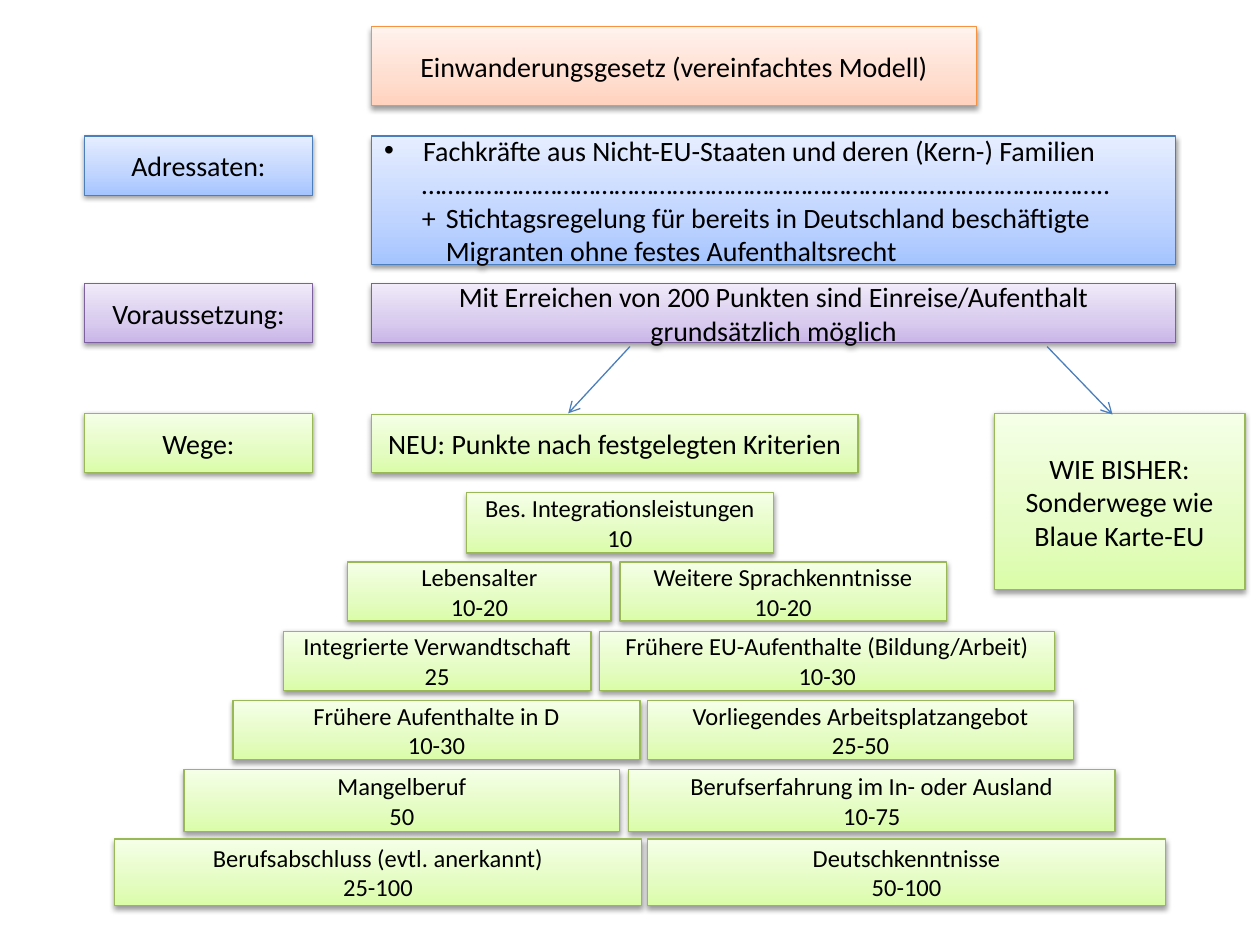
from dataclasses import dataclass

from lxml.etree import SubElement
from pptx import Presentation
from pptx.dml.color import RGBColor
from pptx.enum.shapes import MSO_CONNECTOR, MSO_SHAPE
from pptx.enum.text import MSO_ANCHOR, PP_ALIGN
from pptx.oxml.ns import qn
from pptx.util import Inches, Pt


@dataclass(frozen=True)
class Palette:
    line: str
    stops: tuple  # from the bottom edge to the top edge


@dataclass(frozen=True)
class Theme:
    orange = Palette("F69240", ("FFD2BD", "FFDED0", "FFF2ED"))
    blue = Palette("4B7EBC", ("A4C4FF", "BFD4FF", "E6EEFF"))
    purple = Palette("7D60A0", ("C9B5E8", "D8CBEE", "F0EAF9"))
    green = Palette("98B955", ("DAFDA7", "E4FCC2", "F5FFE7"))
    stop_positions = (0, 35, 100)
    text = "000000"
    font = "Calibri"
    body = Pt(16)
    small = Pt(14)
    line_width = Pt(0.75)


THEME = Theme()

LABEL_LEFT, LABEL_WIDTH = 0.67, 1.81
MAIN_LEFT, MAIN_WIDTH = 2.95, 6.38
BAR_HEIGHT = 0.47

# Each pyramid row: height, then blocks of left, width, criterion, points
CRITERIA = [
    (0.48, [(3.7, 2.44, "Bes. Integrationsleistungen", "10")]),
    (0.47, [(2.76, 2.09, "Lebensalter", "10-20"),
            (4.92, 2.59, "Weitere Sprachkenntnisse", "10-20")]),
    (0.47, [(2.25, 2.44, "Integrierte Verwandtschaft", "25"),
            (4.76, 3.61, "Frühere EU-Aufenthalte (Bildung/Arbeit)", "10-30")]),
    (0.47, [(1.85, 3.23, "Frühere Aufenthalte in D", "10-30"),
            (5.14, 3.38, "Vorliegendes Arbeitsplatzangebot", "25-50")]),
    (0.49, [(1.46, 3.46, "Mangelberuf", "50"),
            (4.99, 3.86, "Berufserfahrung im In- oder Ausland", "10-75")]),
    (0.53, [(0.91, 4.18, "Berufsabschluss (evtl. anerkannt)", "25-100"),
            (5.14, 4.11, "Deutschkenntnisse", "50-100")]),
]


def set_gradient(sp, colors):
    sp.fill.gradient()
    grad = sp._element.spPr.find(qn("a:gradFill"))
    for child in list(grad):
        grad.remove(child)
    stops = SubElement(grad, qn("a:gsLst"))
    for pos, color in zip(THEME.stop_positions, colors):
        gs = SubElement(stops, qn("a:gs"), pos=str(pos * 1000))
        SubElement(gs, qn("a:srgbClr"), val=color)
    SubElement(grad, qn("a:lin"), ang=str(270 * 60000), scaled="0")


def set_shadow(sp):
    sp.shadow.inherit = False
    effects = sp._element.spPr.find(qn("a:effectLst"))
    shadow = SubElement(effects, qn("a:outerShdw"), blurRad=str(Pt(3.1)),
                        dist=str(Pt(1.6)), dir=str(90 * 60000), rotWithShape="0")
    color = SubElement(shadow, qn("a:srgbClr"), val="000000")
    SubElement(color, qn("a:alpha"), val="38000")


def add_box(s, box, text, palette, size=THEME.body, align=PP_ALIGN.CENTER):
    """Add a shaded rectangle; box is left, top, width, height in inches."""
    sp = s.shapes.add_shape(MSO_SHAPE.RECTANGLE, *map(Inches, box))
    set_gradient(sp, palette.stops)
    sp.line.color.rgb = RGBColor.from_string(palette.line)
    sp.line.width = THEME.line_width
    set_shadow(sp)
    tf = sp.text_frame
    tf.word_wrap = True
    tf.vertical_anchor = MSO_ANCHOR.MIDDLE
    tf.text = text
    for p in tf.paragraphs:
        p.alignment = align
        for r in p.runs:
            r.font.size = size
            r.font.name = THEME.font
            r.font.color.rgb = RGBColor.from_string(THEME.text)
    return sp


def set_indent(p, left, first=0, bullet=None):
    pPr = p._p.get_or_add_pPr()
    pPr.set("marL", str(Inches(left)))
    pPr.set("indent", str(Inches(first)))
    if bullet:
        SubElement(pPr, qn("a:buFont"), typeface="Arial")
        SubElement(pPr, qn("a:buChar"), char=bullet)


def add_label(s, top, text, palette):
    add_box(s, (LABEL_LEFT, top, LABEL_WIDTH, BAR_HEIGHT), text, palette)


def add_arrow(s, start, end):
    line = s.shapes.add_connector(MSO_CONNECTOR.STRAIGHT, *map(Inches, start + end))
    line.line.color.rgb = RGBColor.from_string(THEME.blue.line)
    line.line.width = THEME.line_width
    SubElement(line.line._get_or_add_ln(), qn("a:tailEnd"), type="arrow")
    SubElement(line._element.spPr, qn("a:effectLst"))


def add_addressees(s, top):
    add_label(s, top, "Adressaten:", THEME.blue)
    text = "\n".join((
        "Fachkräfte aus Nicht-EU-Staaten und deren (Kern-) Familien",
        "……………………………………………………………………………………………..",
        "+\tStichtagsregelung für bereits in Deutschland beschäftigte "
        "Migranten ohne festes Aufenthaltsrecht",
    ))
    sp = add_box(s, (MAIN_LEFT, top, MAIN_WIDTH, 1.02), text, THEME.blue,
                 align=PP_ALIGN.LEFT)
    group, dots, cutoff = sp.text_frame.paragraphs
    set_indent(group, 0.31, -0.31, "•")
    set_indent(dots, 0.3)
    set_indent(cutoff, 0.49, -0.19)


def add_requirement(s, top):
    add_label(s, top, "Voraussetzung:", THEME.purple)
    add_box(s, (MAIN_LEFT, top, MAIN_WIDTH, BAR_HEIGHT),
            "Mit Erreichen von 200 Punkten sind Einreise/Aufenthalt "
            "grundsätzlich möglich", THEME.purple)


def add_paths(s, top):
    add_label(s, top, "Wege:", THEME.green)
    add_box(s, (MAIN_LEFT, top + 0.01, 3.86, 0.46),
            "NEU: Punkte nach festgelegten Kriterien", THEME.green)
    add_box(s, (7.89, top, 1.99, 1.4),
            "WIE BISHER: Sonderwege wie\nBlaue Karte-EU", THEME.green)
    add_arrow(s, (5, top - 0.53), (4.51, top))
    add_arrow(s, (8.31, top - 0.53), (8.83, top + 0.01))


def add_pyramid(s, top, pitch):
    for i, (height, blocks) in enumerate(CRITERIA):
        for left, width, criterion, points in blocks:
            add_box(s, (left, top + i * pitch, width, height),
                    f"{criterion}\n{points}", THEME.green, THEME.small)


def main():
    prs = Presentation()
    prs.slide_width, prs.slide_height = Inches(10), Inches(7.5)
    s = prs.slides.add_slide(prs.slide_layouts[6])
    add_box(s, (MAIN_LEFT, 0.21, 4.8, 0.63),
            "Einwanderungsgesetz (vereinfachtes Modell)", THEME.orange)
    add_addressees(s, 1.08)
    add_requirement(s, 2.25)
    add_paths(s, 3.28)
    add_pyramid(s, 3.91, 0.55)
    prs.save("out.pptx")


if __name__ == "__main__":
    main()
